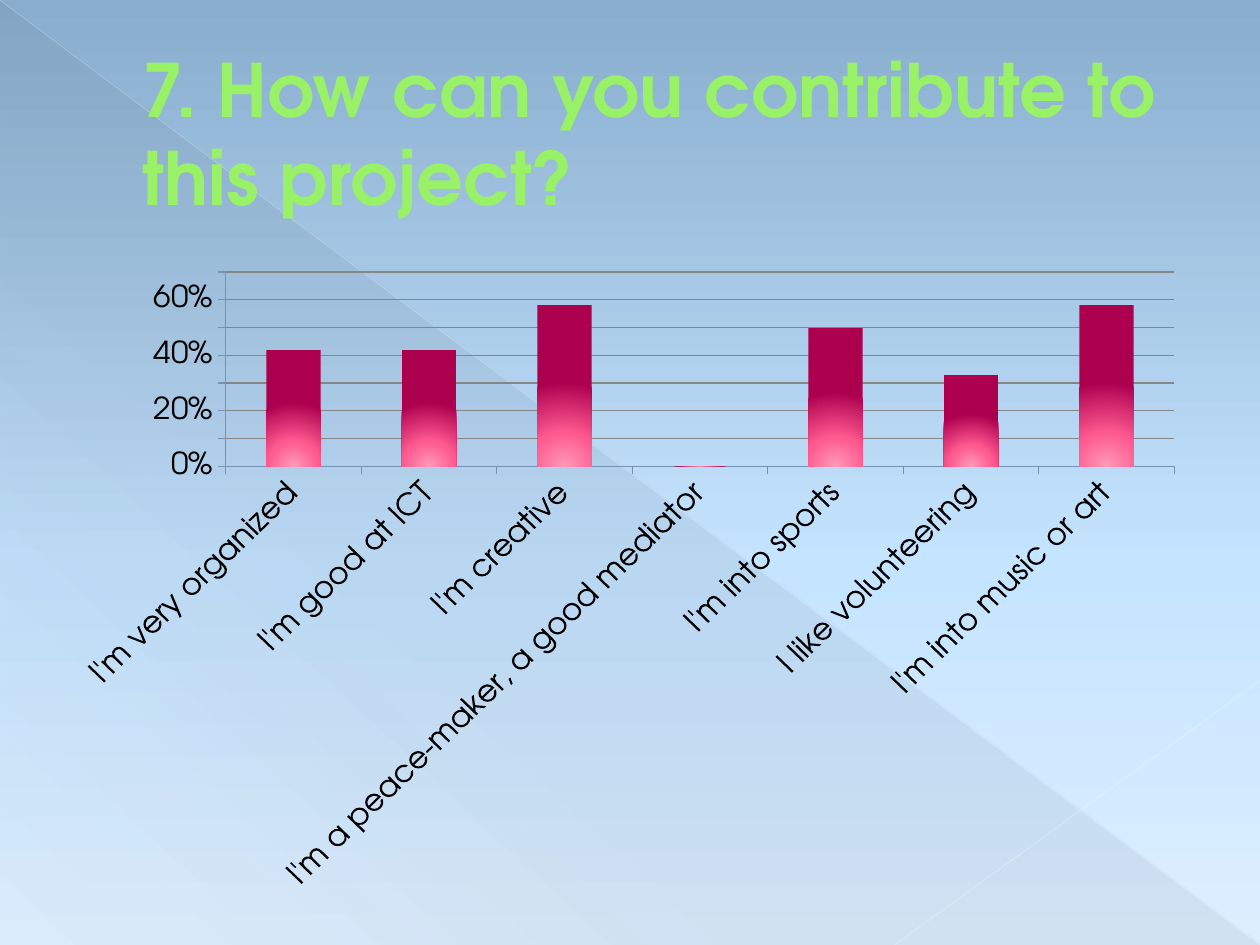
"""Build a survey slide with a title and a column chart of contributions."""
from typing import Any, NamedTuple

from lxml.etree import SubElement
from pptx import Presentation
from pptx.chart.data import CategoryChartData
from pptx.dml.color import RGBColor
from pptx.enum.chart import XL_CHART_TYPE, XL_TICK_MARK
from pptx.enum.shapes import MSO_CONNECTOR, MSO_SHAPE
from pptx.enum.text import MSO_ANCHOR
from pptx.oxml import parse_xml
from pptx.oxml.ns import nsdecls, qn
from pptx.util import Emu, Inches, Pt

W, H = Inches(10), Inches(7.5)
FONT = "TeX Gyre Adventor"
COLORS = {
    "sky_top": "88ADCD", "sky_mid": "C5E4FF", "sky_low": "DDEFFF",
    "shade": "4E5B6F", "ray_long": "EAF5FF", "ray_short": "ECF6FF",
    "title": "98F167", "title_edge": "589129", "label": "000000",
    "bar_glow": "FF9AB8", "bar_mid": "FF5A90", "bar_dark": "AC004F",
    "grid": "868686", "axis": "7293B3",
}
ANSWERS = {
    "I'm very organized": 0.42,
    "I'm good at ICT": 0.42,
    "I'm creative": 0.58,
    "I'm a peace-maker, a good mediator": 0,
    "I'm into sports": 0.5,
    "I like volunteering": 0.33,
    "I'm into music or art": 0.58,
}
LINEAR = '<a:lin ang="{}" scaled="0"/>'
RADIAL = ('<a:path path="circle">'
          '<a:fillToRect l="50000" t="100000" r="50000" b="0"/></a:path>')


class Box(NamedTuple):
    """Left, top, width and height as shares of the slide."""
    x: float
    y: float
    w: float
    h: float

    def emu(self) -> tuple[Emu, ...]:
        return tuple(Emu(round(v * s)) for v, s in zip(self, (W, H, W, H)))


class Stop(NamedTuple):
    """Gradient stop with position and opacity in percent."""
    pos: int
    color: str
    alpha: int = 100


class Ray(NamedTuple):
    """Faint line between two points given as shares of the slide."""
    x1: float
    y1: float
    x2: float
    y2: float
    color: str
    width: float
    alpha: int


STOPS = {
    "sky": [Stop(0, "sky_top"), Stop(60, "sky_mid"), Stop(100, "sky_low")],
    "shade": [Stop(0, "shade", 10), Stop(70, "shade", 8), Stop(100, "shade", 1)],
    "bar": [Stop(0, "bar_glow"), Stop(40, "bar_mid"), Stop(100, "bar_dark")],
}
RAYS = [
    Ray(0, 0, 1, 1, "ray_long", 0.39, 35),
    Ray(1, 0.72, 0.71, 1, "ray_short", 0.47, 45),
]


def rgb(name: str) -> RGBColor:
    return RGBColor.from_string(COLORS[name])


def set_all(obj: Any, values: dict[str, Any]) -> None:
    for name, value in values.items():
        setattr(obj, name, value)


def set_gradient(fill: Any, stops: list[Stop], direction: str) -> None:
    fill.gradient()
    grad = fill._fill._gradFill
    gs = "".join(
        f'<a:gs pos="{s.pos * 1000}"><a:srgbClr val="{COLORS[s.color]}">'
        f'<a:alpha val="{s.alpha * 1000}"/></a:srgbClr></a:gs>' for s in stops)
    new = parse_xml(f'<a:gradFill {nsdecls("a")} rotWithShape="1">'
                    f'<a:gsLst>{gs}</a:gsLst>{direction}</a:gradFill>')
    grad[:] = list(new)


def add_shade(slide: Any, box: Box) -> None:
    sp = slide.shapes.add_shape(MSO_SHAPE.RIGHT_TRIANGLE, *box.emu())
    sp.shadow.inherit = False
    sp.line.fill.background()
    set_gradient(sp.fill, STOPS["shade"], LINEAR.format(133 * 60000))


def add_ray(slide: Any, ray: Ray) -> None:
    ends = (round(v * s) for v, s in zip(ray[:4], (W, H, W, H)))
    ln = slide.shapes.add_connector(MSO_CONNECTOR.STRAIGHT, *map(Emu, ends))
    ln.line.color.rgb = rgb(ray.color)
    ln.line.width = Pt(ray.width)
    clr = next(ln._element.spPr.iter(qn("a:srgbClr")))
    SubElement(clr, qn("a:alpha"), val=str(ray.alpha * 1000))
    SubElement(ln._element.spPr, qn("a:effectLst"))


def add_title(slide: Any, box: Box, text: str) -> None:
    tf = slide.shapes.add_textbox(*box.emu()).text_frame
    set_all(tf, {"word_wrap": True, "vertical_anchor": MSO_ANCHOR.MIDDLE})
    p = tf.paragraphs[0]
    pPr = p._p.get_or_add_pPr()
    pPr.set("marL", str(Inches(0.53)))
    pPr.set("indent", "0")
    r = p.add_run()
    r.text = text
    set_all(r.font, {"name": FONT, "size": Pt(42), "bold": True})
    r.font.color.rgb = rgb("title")
    r._r.get_or_add_rPr().insert(0, parse_xml(
        f'<a:ln {nsdecls("a")} w="{Pt(0.5)}"><a:solidFill>'
        f'<a:srgbClr val="{COLORS["title_edge"]}"/></a:solidFill></a:ln>'))


def add_columns(slide: Any, box: Box, answers: dict[str, float]) -> None:
    data = CategoryChartData(number_format="0%")
    data.categories = list(answers)
    data.add_series("Series 1", list(answers.values()))
    chart = slide.shapes.add_chart(
        XL_CHART_TYPE.COLUMN_CLUSTERED, *box.emu(), data).chart
    set_all(chart, {"has_legend": False, "has_title": False})
    set_all(chart.font, {"name": FONT, "size": Pt(18)})
    chart.font.color.rgb = rgb("label")
    cat, val = chart.category_axis, chart.value_axis
    set_all(val, {"minimum_scale": 0, "maximum_scale": 0.7, "major_unit": 0.1,
                  "has_major_gridlines": True})
    set_all(val.tick_labels, {"number_format": "0%",
                              "number_format_is_linked": False})
    for axis in (cat, val):
        set_all(axis, {"major_tick_mark": XL_TICK_MARK.OUTSIDE,
                       "minor_tick_mark": XL_TICK_MARK.NONE})
        axis.format.line.color.rgb = rgb("axis")
    val.major_gridlines.format.line.color.rgb = rgb("grid")
    cat.tick_labels.font.size = Pt(18)
    cat._element.find(qn("c:txPr")).find(qn("a:bodyPr")).set("rot", "-2700000")
    plot = chart.plots[0]
    set_all(plot, {"gap_width": 150, "vary_by_categories": False})
    set_gradient(plot.series[0].format.fill, STOPS["bar"], RADIAL)


def main() -> None:
    prs = Presentation()
    set_all(prs, {"slide_width": W, "slide_height": H})
    s = prs.slides.add_slide(prs.slide_layouts[6])
    set_gradient(s.background.fill, STOPS["sky"], LINEAR.format(90 * 60000))
    add_shade(s, Box(0, 0, 1, 1))
    for ray in RAYS:
        add_ray(s, ray)
    add_title(s, Box(0.05, 0.04, 0.9, 0.2),
              "7. How can you contribute to this project?")
    add_columns(s, Box(0.05, 0.275, 0.9, 0.667), ANSWERS)
    prs.save("out.pptx")


if __name__ == "__main__":
    main()
